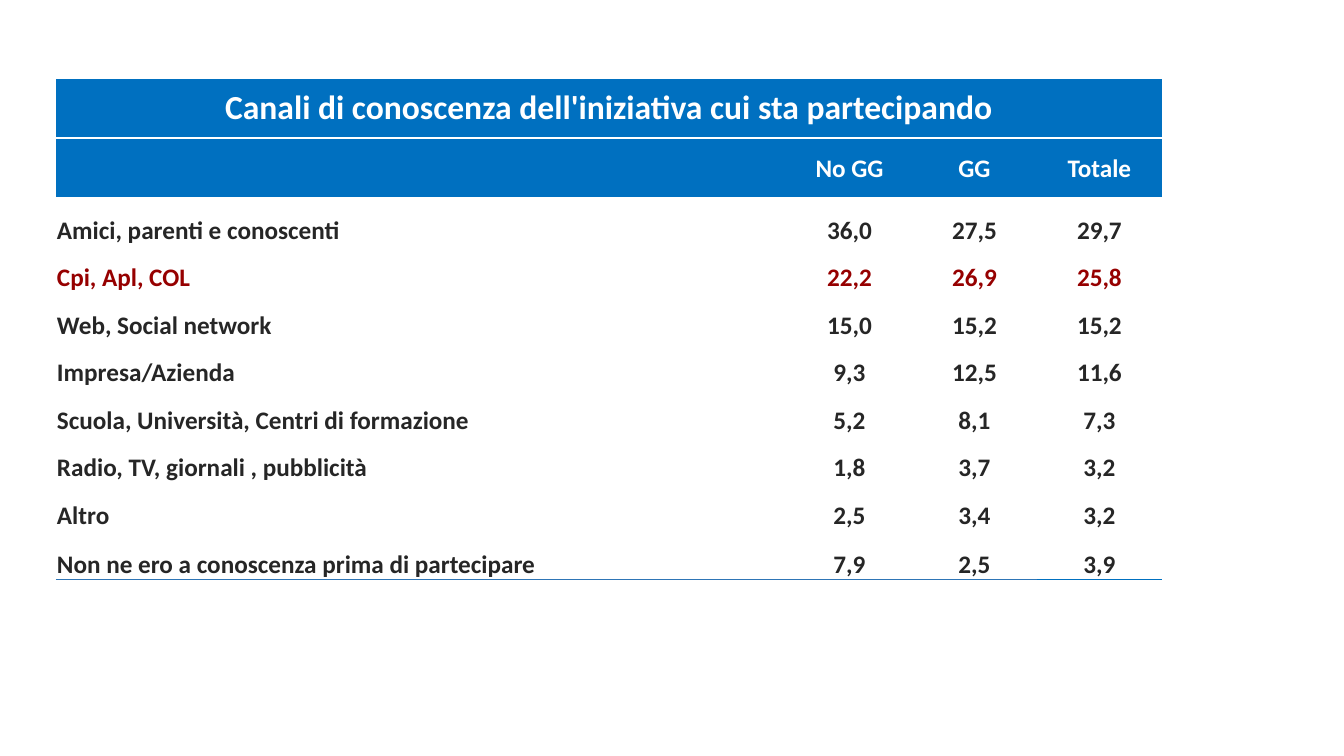
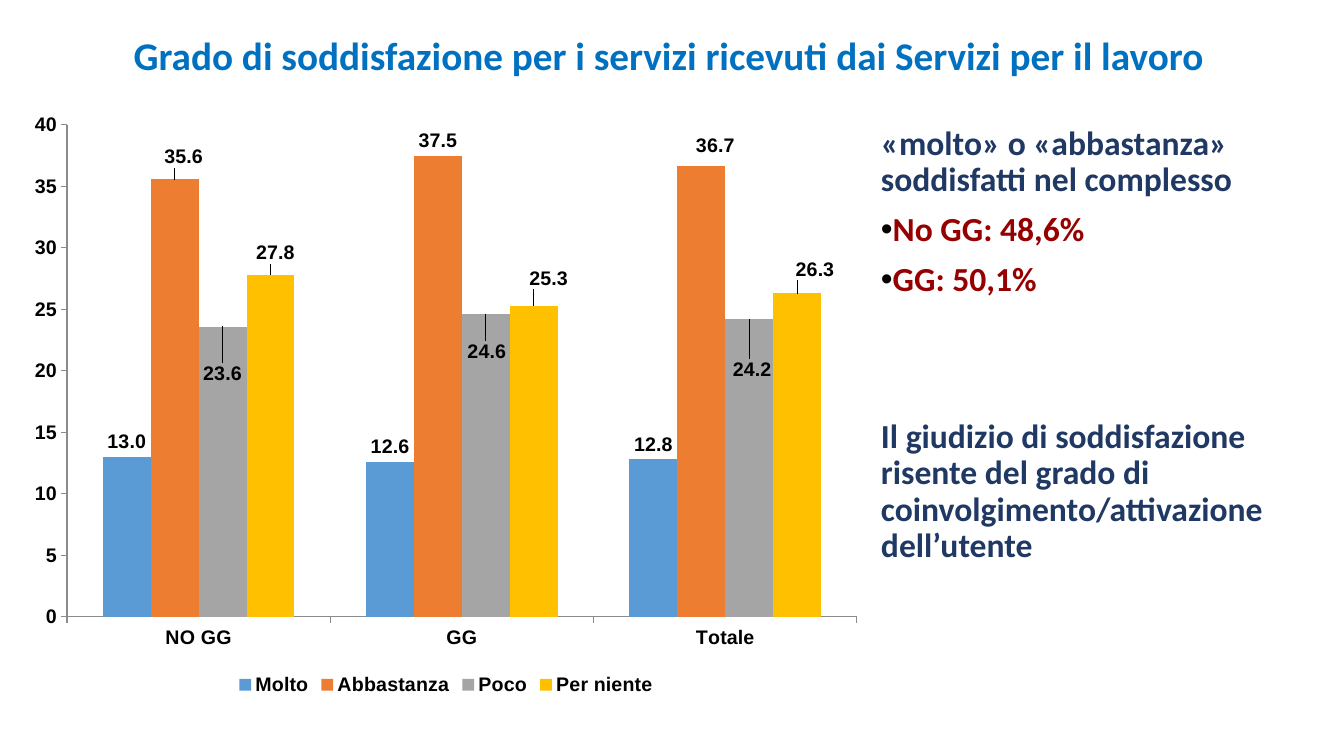
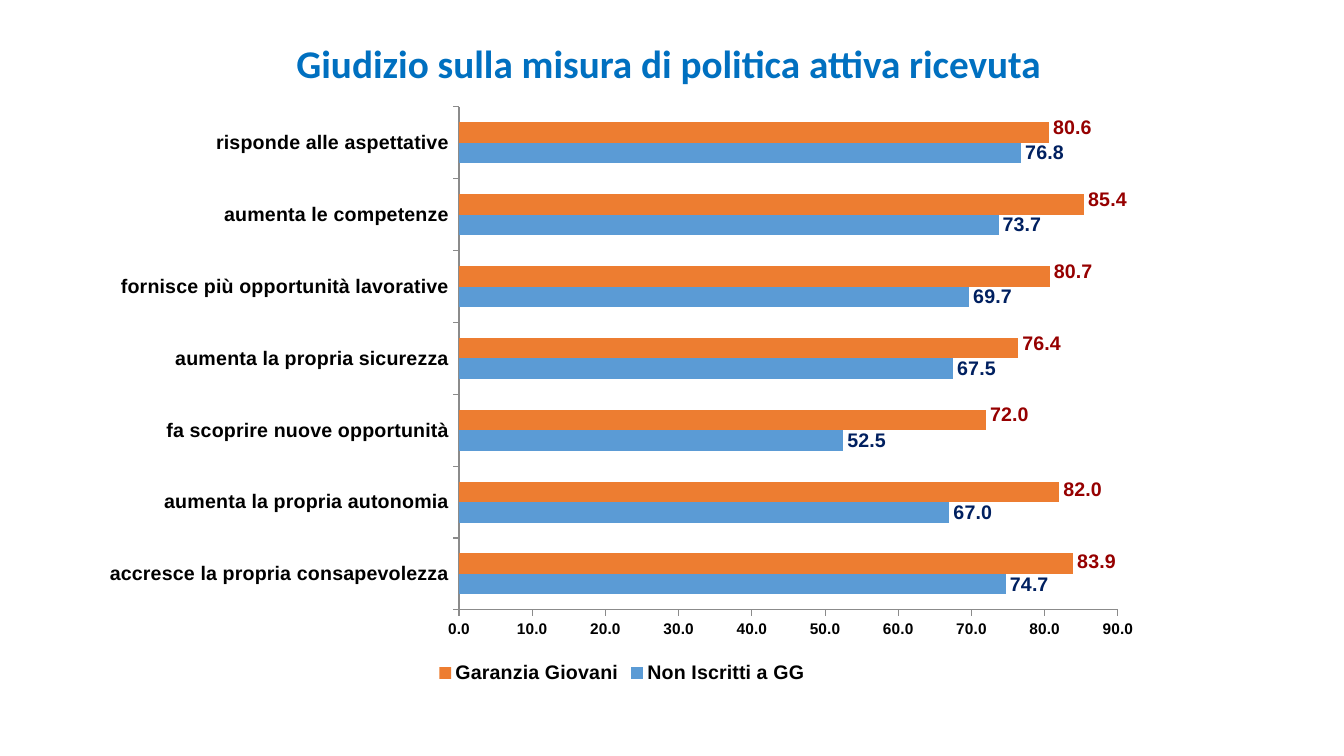
from dataclasses import dataclass
from typing import Any

from lxml import etree
from pptx import Presentation
from pptx.chart.data import CategoryChartData
from pptx.dml.color import RGBColor
from pptx.enum import chart as ch
from pptx.enum import text as tx
from pptx.oxml import ns
from pptx.util import Emu, Pt

# Shared style
SCALE = 914400 / 100.8
FACE = "Calibri"
HUES = {
    "blue": "0070C0", "edge": "2E75B6", "navy": "203864", "deep": "002060",
    "red": "960000", "ink": "262626", "black": "000000", "white": "FFFFFF",
    "axis": "8B8B8B", "sky": "5B9BD5", "orange": "ED7D31", "grey": "A5A5A5",
    "gold": "FFC000",
}
PLAIN = "{2D5ABB26-0587-4C30-8999-92F81FD0307C}"


@dataclass
class Box:
    x: int
    y: int
    w: int
    h: int

    def emu(self) -> tuple:
        return tuple(px(n) for n in (self.x, self.y, self.w, self.h))


@dataclass
class Para:
    words: str
    hue: str = "navy"
    gap: int = 0
    dot: bool = False


@dataclass
class Series:
    name: str
    vals: tuple
    hue: str
    ink: str
    moves: dict  # point index -> label shift in px


@dataclass
class Graph:
    kind: Any
    box: Box
    plot: Box
    cats: tuple
    series: tuple
    top: int
    step: int
    form: str
    size: int


def px(n: float) -> Emu:
    return Emu(round(n * SCALE))


def rgb(hue: str) -> RGBColor:
    return RGBColor.from_string(HUES[hue])


def style(font: Any, size: int, hue: str, face: str = FACE) -> None:
    font.name, font.size, font.bold = face, Pt(size), True
    font.color.rgb = rgb(hue)


def sub(node: Any, tag: str, **attrs: Any) -> Any:
    return etree.SubElement(node, ns.qn(tag), {k: str(v) for k, v in attrs.items()})


# Text
def frame(slide: Any, box: Box) -> Any:
    body = slide.shapes.add_textbox(*box.emu()).text_frame
    body.word_wrap = True
    body.margin_left = body.margin_right = px(10)
    body.margin_top = body.margin_bottom = px(10)
    return body


def title(slide: Any, words: str, high: int) -> None:
    body = frame(slide, Box(89, 34, 1159, high))
    body.vertical_anchor = tx.MSO_ANCHOR.MIDDLE
    para = body.paragraphs[0]
    para.text = words
    para.alignment = tx.PP_ALIGN.CENTER
    para.line_spacing = 0.9
    style(para.font, 28, "blue")


def notes(slide: Any, box: Box, items: tuple) -> None:
    body = frame(slide, box)
    for i, item in enumerate(items):
        para = body.add_paragraph() if i else body.paragraphs[0]
        para.text = item.words
        props = para._p.get_or_add_pPr()
        props.set("marL", str(px(25 if item.dot else 19)))
        props.set("indent", str(px(-6 if item.dot else 0)))
        if item.dot:
            sub(sub(props, "a:buClr"), "a:srgbClr", val=HUES["black"])
            sub(props, "a:buFont", typeface="Arial")
            sub(props, "a:buChar", char="•")
        para.line_spacing = 0.9
        if item.gap:
            para.space_before = Pt(item.gap)
        style(para.font, 24, item.hue)


# Table
def fill(cell: Any, words: str, size: int, ink: str, back: str, mid: bool, low: bool) -> None:
    cell.margin_left = cell.margin_right = cell.margin_top = px(1)
    cell.margin_bottom = 0
    cell.vertical_anchor = tx.MSO_ANCHOR.BOTTOM if low else tx.MSO_ANCHOR.MIDDLE
    cell.fill.solid()
    cell.fill.fore_color.rgb = rgb(back)
    para = cell.text_frame.paragraphs[0]
    para.text = words
    para.alignment = tx.PP_ALIGN.CENTER if mid else tx.PP_ALIGN.LEFT
    style(para.font, size, ink)


def rule(cell: Any, tag: str, hue: str) -> None:
    line = etree.Element(ns.qn(tag), w=str(Pt(1)))
    sub(sub(line, "a:solidFill"), "a:srgbClr", val=HUES[hue])
    cell._tc.get_or_add_tcPr().insert(0, line)


def table(slide: Any, box: Box, cols: tuple, highs: tuple, rows: tuple) -> None:
    grid = slide.shapes.add_table(len(rows), len(cols), *box.emu()).table
    grid.first_row = grid.horz_banding = False
    grid._tbl.tblPr.find(ns.qn("a:tableStyleId")).text = PLAIN
    for col, wide in zip(grid.columns, cols):
        col.width = px(wide)
    for row, high in zip(grid.rows, highs):
        row.height = px(high)
    last = len(rows) - 1
    for r, row in enumerate(rows):
        head = r < 2
        ink = "white" if head else "red" if r == 3 else "ink"
        for c, words in enumerate(row):
            cell = grid.cell(r, c)
            fill(cell, words, 24 if r == 0 else 18, ink,
                 "blue" if head else "white", head or c > 0, not head)
            if head or r == last:
                rule(cell, "a:lnB", "white" if head else "blue" if c == 3 else "edge")
            if r < 3:
                rule(cell, "a:lnT", "white")
    grid.cell(0, 0).merge(grid.cell(0, len(cols) - 1))


# Charts
def place(node: Any, x: float, y: float, size: tuple = ()) -> None:
    """Fill a layout node with fractions of the chart."""
    man = sub(node, "c:manualLayout")
    if size:
        sub(man, "c:layoutTarget", val="inner")
        sub(man, "c:xMode", val="edge")
        sub(man, "c:yMode", val="edge")
    for tag, val in zip("xywh", (x, y, *size)):
        sub(man, f"c:{tag}", val=round(val, 4))


def axis(item: Any, size: int) -> None:
    item.has_major_gridlines = False
    item.major_tick_mark = ch.XL_TICK_MARK.OUTSIDE
    item.minor_tick_mark = ch.XL_TICK_MARK.NONE
    item.format.line.color.rgb = rgb("axis")
    item.format.line.width = Pt(0.75)
    style(item.tick_labels.font, size, "black", "Arial")


def tags(ser: Any, info: Series, box: Box) -> None:
    marks = ser.data_labels
    marks.show_value = True
    marks.number_format, marks.number_format_is_linked = "0.0", False
    marks.position = ch.XL_LABEL_POSITION.OUTSIDE_END
    style(marks.font, 14, info.ink, "Arial")
    for i, (dx, dy) in info.moves.items():
        mark = ser.points[i].data_label
        style(mark.font, 14, info.ink, "Arial")
        mark.position = ch.XL_LABEL_POSITION.OUTSIDE_END
        key = ser._element.xpath(f"c:dLbls/c:dLbl/c:idx[@val='{i}']")[0]
        spot = etree.Element(ns.qn("c:layout"))
        place(spot, dx / box.w, dy / box.h)
        key.addnext(spot)


def graph(slide: Any, g: Graph) -> None:
    data = CategoryChartData(number_format="0.0")
    data.categories = g.cats
    for info in g.series:
        data.add_series(info.name, info.vals)
    chart = slide.shapes.add_chart(g.kind, *g.box.emu(), data).chart
    chart.has_title = False
    style(chart.font, 14, "black", "Arial")
    chart.has_legend = True
    chart.legend.position = ch.XL_LEGEND_POSITION.BOTTOM
    chart.legend.include_in_layout = False
    style(chart.legend.font, 14, "black", "Arial")

    axis(chart.category_axis, 14)
    vals = chart.value_axis
    axis(vals, g.size)
    vals.minimum_scale, vals.maximum_scale, vals.major_unit = 0, g.top, g.step
    vals.tick_labels.number_format = g.form
    vals.tick_labels.number_format_is_linked = False

    area = chart._chartSpace.chart.plotArea
    for old in area.findall(ns.qn("c:layout")):
        area.remove(old)
    spot = etree.Element(ns.qn("c:layout"))
    place(spot, (g.plot.x - g.box.x) / g.box.w, (g.plot.y - g.box.y) / g.box.h,
          (g.plot.w / g.box.w, g.plot.h / g.box.h))
    area.insert(0, spot)

    plot = chart.plots[0]
    plot.gap_width, plot.overlap, plot.vary_by_categories = 150, 0, False
    for ser, info in zip(plot.series, g.series):
        ser.format.fill.solid()
        ser.format.fill.fore_color.rgb = rgb(info.hue)
        ser.invert_if_negative = False
        tags(ser, info, g.box)


# Content
ROWS = (
    ("Canali di conoscenza dell'iniziativa cui sta partecipando", "", "", ""),
    ("", "No GG", "GG", "Totale"),
    ("Amici, parenti e conoscenti", "36,0", "27,5", "29,7"),
    ("Cpi, Apl, COL", "22,2", "26,9", "25,8"),
    ("Web, Social network", "15,0", "15,2", "15,2"),
    ("Impresa/Azienda", "9,3", "12,5", "11,6"),
    ("Scuola, Università, Centri di formazione", "5,2", "8,1", "7,3"),
    ("Radio, TV, giornali , pubblicità", "1,8", "3,7", "3,2"),
    ("Altro", "2,5", "3,4", "3,2"),
    ("Non ne ero a conoscenza prima di partecipare", "7,9", "2,5", "3,9"),
)
HIGHS = (60, 60, 48, 47, 48, 47, 48, 47, 48, 49)
NOTES = (
    Para("«molto» o «abbastanza» soddisfatti nel complesso"),
    Para("No GG: 48,6%", "red", 10, True),
    Para("GG: 50,1%", "red", 10, True),
    Para("Il giudizio di soddisfazione risente del grado di "
         "coinvolgimento/attivazione dell’utente", gap=86),
)
GRADE = Graph(
    ch.XL_CHART_TYPE.COLUMN_CLUSTERED, Box(18, 103, 856, 597), Box(67, 125, 790, 492),
    ("NO GG", "GG", "Totale"),
    (
        Series("Molto", (13, 12.6, 12.8), "sky", "black", {}),
        Series("Abbastanza", (35.6, 37.5, 36.7), "orange", "black",
               {0: (9, -7), 2: (14, -5)}),
        Series("Poco", (23.6, 24.6, 24.2), "grey", "black",
               {0: (0, 62), 1: (1, 52), 2: (3, 65)}),
        Series("Per niente", (27.8, 25.3, 26.3), "gold", "black",
               {0: (5, -7), 1: (15, -12), 2: (18, -9)}),
    ),
    40, 5, "0", 14,
)
VIEWS = Graph(
    ch.XL_CHART_TYPE.BAR_CLUSTERED, Box(89, 95, 1066, 593), Box(459, 107, 659, 503),
    ("accresce la propria consapevolezza", "aumenta la propria autonomia",
     "fa scoprire nuove opportunità", "aumenta la propria sicurezza",
     "fornisce più opportunità lavorative", "aumenta le competenze",
     "risponde alle aspettative"),
    (
        Series("Non Iscritti a GG", (74.7, 67, 52.5, 67.5, 69.7, 73.7, 76.8),
               "sky", "deep", {}),
        Series("Garanzia Giovani", (83.9, 82, 72, 76.4, 80.7, 85.4, 80.6),
               "orange", "red", {i: (0, -2 if i < 2 else -5) for i in range(7)}),
    ),
    90, 10, "0.0", 11,
)


def main() -> None:
    deck = Presentation()
    deck.slide_width, deck.slide_height = px(1344), px(756)
    first, second, third = (deck.slides.add_slide(deck.slide_layouts[6]) for _ in range(3))

    table(first, Box(56, 78, 1106, sum(HIGHS)), (731, 125, 125, 125), HIGHS, ROWS)

    title(second, "Grado di soddisfazione per i servizi ricevuti dai Servizi per il lavoro", 48)
    notes(second, Box(852, 116, 458, 542), NOTES)
    graph(second, GRADE)

    title(third, "Giudizio sulla misura di politica attiva ricevuta", 63)
    graph(third, VIEWS)

    deck.save("out.pptx")


if __name__ == "__main__":
    main()
